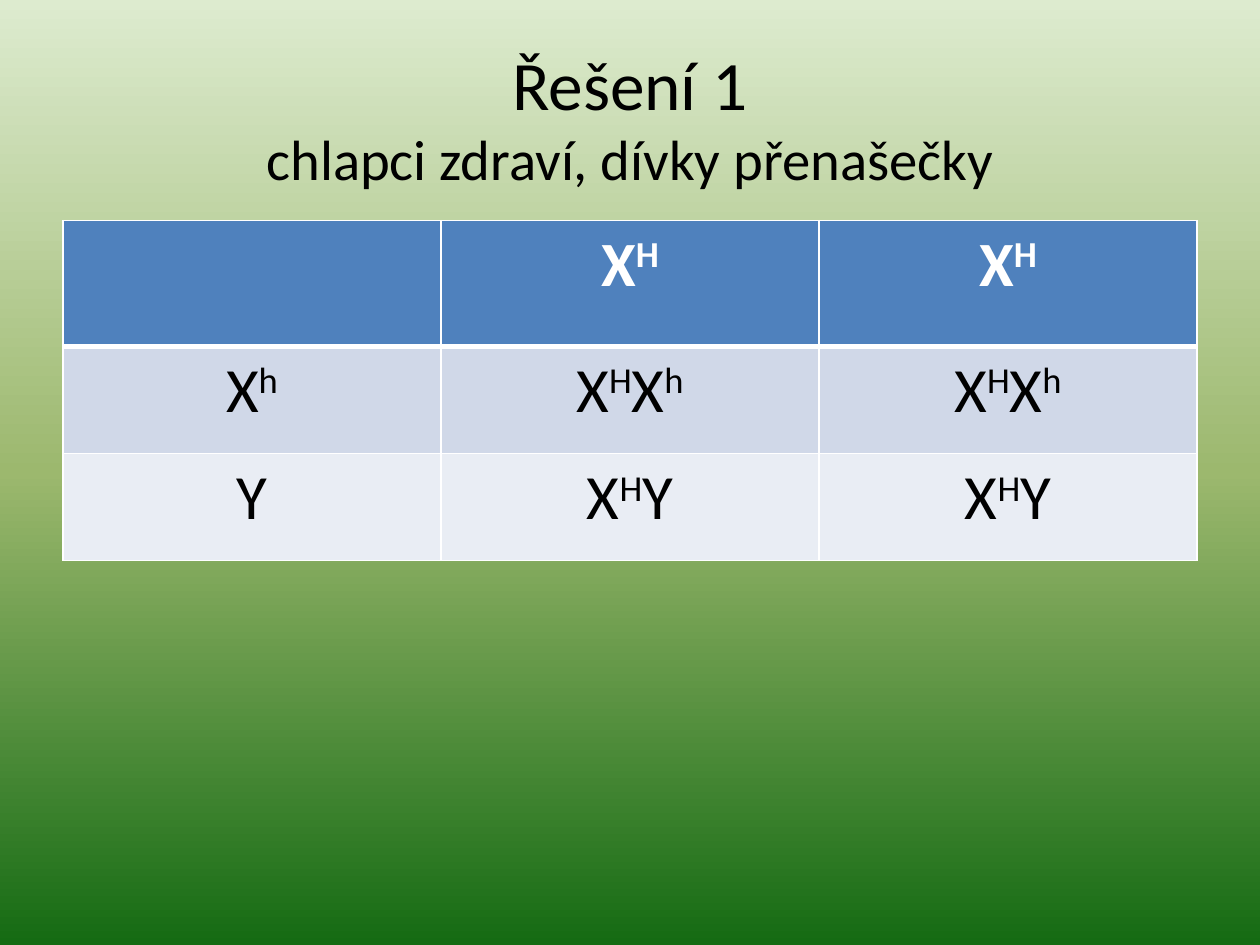
from copy import deepcopy

from pptx import Presentation, util as u
from pptx.dml.color import RGBColor
from pptx.enum import text as t
from pptx.oxml import parse_xml
from pptx.oxml.ns import nsdecls, qn

WIDTH, HEIGHT = 10, 7.5
TITLE_BOX = (0.05, 0.04, 0.9, 1 / 6)
TABLE_BOX = (0.05, 1.75 / HEIGHT, 0.9, 0.36)
GRADIENT = [(0, "DDEBCF"), (0.5, "9CB86E"), (1, "156B13")]
ROW_FILLS = ["4F81BD", "D0D8E8", "E9EDF4"]
ROW_HEIGHTS = [1, 0.85, 0.85]
CROSS = [
    ["", "X^H", "X^H"],
    ["X^h", "X^HX^h", "X^HX^h"],
    ["Y", "X^HY", "X^HY"],
]


def color(value):
    """Turn a hex string into a colour."""
    return RGBColor.from_string(value)


def place(box):
    """Turn shares of the slide into left, top, width and height."""
    sizes = (WIDTH, HEIGHT, WIDTH, HEIGHT)
    return [u.Inches(share * size) for share, size in zip(box, sizes)]


def add_text(paragraph, content, size=36, fill="000000", bold=False, raised=False):
    """Add one centred, formatted run to a paragraph."""
    paragraph.alignment = t.PP_ALIGN.CENTER
    run = paragraph.add_run()
    run.text = content
    font = run.font
    font.name, font.size, font.bold = "Calibri", u.Pt(size), bold
    font.color.rgb = color(fill)
    if raised:
        run._r.get_or_add_rPr().set("baseline", "30000")


def add_genotype(paragraph, genotype, **style):
    """Write a genotype in which ^ raises the letter after it."""
    base, *alleles = genotype.split("^")
    if base:
        add_text(paragraph, base, **style)
    for allele in alleles:
        add_text(paragraph, allele[0], raised=True, **style)
        if allele[1:]:
            add_text(paragraph, allele[1:], **style)


def add_borders(cell, bottom_width):
    """Draw white borders around a cell."""
    properties = cell._tc.get_or_add_tcPr()
    widths = {"lnL": 1, "lnR": 1, "lnT": 1, "lnB": bottom_width}
    for index, (side, width) in enumerate(widths.items()):
        properties.insert(index, parse_xml(
            f'<a:{side} {nsdecls("a")} w="{u.Pt(width)}"><a:solidFill>'
            f'<a:srgbClr val="FFFFFF"/></a:solidFill></a:{side}>'))


def paint_background(slide):
    """Fill the slide with a vertical gradient of three colours."""
    fill = slide.background.fill
    fill.gradient()
    fill.gradient_angle = 270
    stop_list = next(slide.element.iter(qn("a:gsLst")))
    stop_list.append(deepcopy(stop_list[-1]))
    for stop, (position, value) in zip(fill.gradient_stops, GRADIENT):
        stop.position = position
        stop.color.rgb = color(value)


def add_title(slide, box):
    """Place the heading and its subtitle line."""
    frame = slide.shapes.add_textbox(*place(box)).text_frame
    frame.word_wrap = True
    frame.vertical_anchor = t.MSO_ANCHOR.MIDDLE
    paragraph = frame.paragraphs[0]
    add_text(paragraph, "Řešení 1", size=39.6)
    paragraph.add_line_break()
    add_text(paragraph, "chlapci zdraví, dívky přenašečky", size=32.4)


def add_cross_table(slide, box):
    """Place the table of parental and offspring genotypes."""
    table = slide.shapes.add_table(len(CROSS), len(CROSS[0]), *place(box)).table
    for row_index, genotypes in enumerate(CROSS):
        header = row_index == 0
        table.rows[row_index].height = u.Inches(ROW_HEIGHTS[row_index])
        for column_index, genotype in enumerate(genotypes):
            cell = table.cell(row_index, column_index)
            cell.fill.solid()
            cell.fill.fore_color.rgb = color(ROW_FILLS[row_index])
            add_borders(cell, 3 if header else 1)
            add_genotype(cell.text_frame.paragraphs[0], genotype, bold=header,
                         fill="FFFFFF" if header else "000000")


def main():
    """Build and save the slide."""
    presentation = Presentation()
    presentation.slide_width = u.Inches(WIDTH)
    presentation.slide_height = u.Inches(HEIGHT)
    slide = presentation.slides.add_slide(presentation.slide_layouts[6])
    paint_background(slide)
    add_title(slide, TITLE_BOX)
    add_cross_table(slide, TABLE_BOX)
    presentation.save("out.pptx")


if __name__ == "__main__":
    main()
